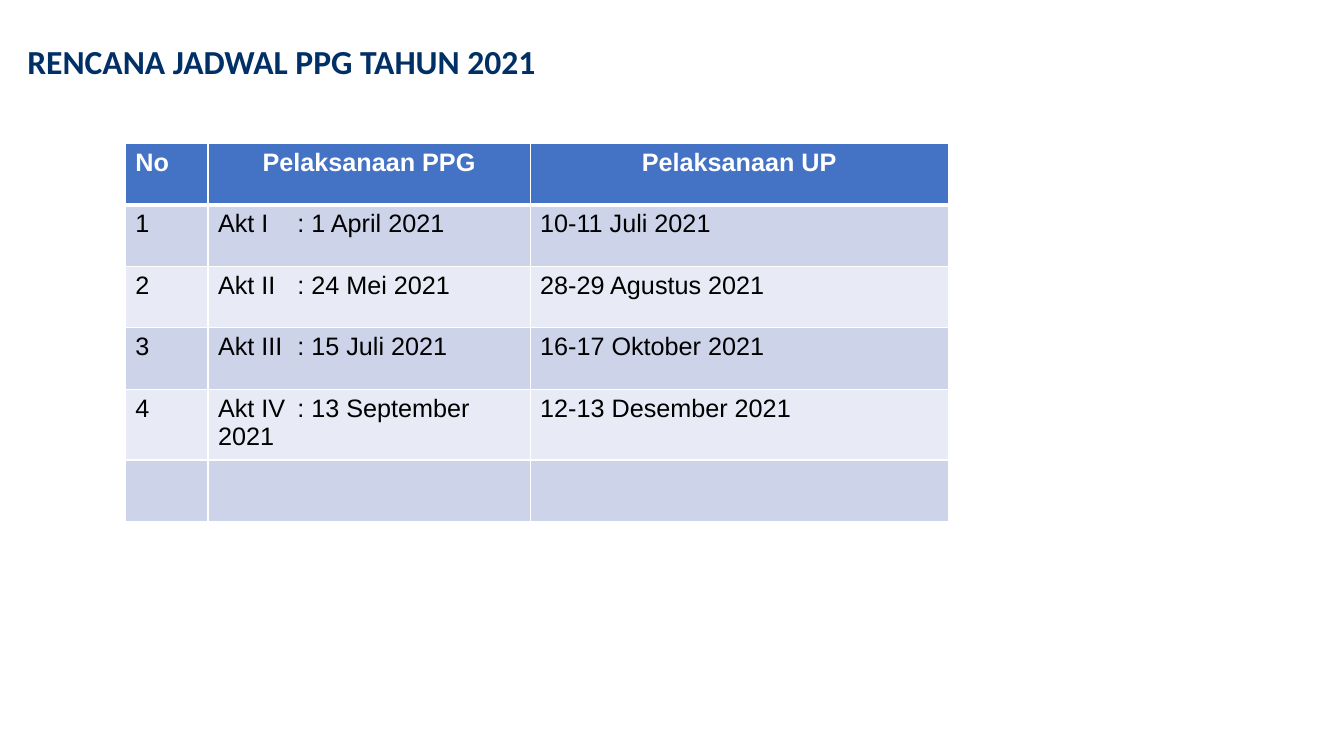
"""Build the slide with the PPG 2021 schedule table."""
from lxml import etree
from pptx import Presentation
from pptx.dml.color import RGBColor
from pptx.enum.text import PP_ALIGN
from pptx.oxml.ns import qn
from pptx.util import Cm, Pt

LEFT, CENTER = PP_ALIGN.LEFT, PP_ALIGN.CENTER

TITLE = "RENCANA JADWAL PPG TAHUN 2021"
HEADER = ("No", "Pelaksanaan PPG", "Pelaksanaan UP")
SCHEDULE = [
    ("1", "Akt I\t: 1 April 2021", "10-11 Juli 2021"),
    ("2", "Akt II\t: 24 Mei 2021", "28-29 Agustus 2021"),
    ("3", "Akt III\t: 15 Juli 2021", "16-17 Oktober 2021"),
    ("4", "Akt IV\t: 13 September 2021", "12-13 Desember 2021"),
    ("", "", ""),
]
COLORS = {
    "title": "013066",
    "header": "4472C4",
    "odd": "CDD4EA",
    "even": "E8EBF5",
    "white": "FFFFFF",
    "text": "000000",
}
COLUMN_WIDTHS = (Cm(2.08), Cm(8.12), Cm(10.54))
ROW_HEIGHT = Cm(1.55)
COLON_TAB = Cm(2)


def write_text(frame, text, size=18, font="Arial", color="text", bold=False, align=LEFT):
    paragraph = frame.paragraphs[0]
    paragraph.alignment = align
    paragraph.font.size = Pt(size)
    if "\t" in text:
        tab_list = etree.Element(qn("a:tabLst"))
        etree.SubElement(tab_list, qn("a:tab"), pos=str(COLON_TAB), algn="l")
        paragraph._p.get_or_add_pPr().insert(0, tab_list)
    if text:
        run = paragraph.add_run()
        run.text = text
        run.font.name = font
        run.font.size = Pt(size)
        run.font.bold = bold
        run.font.color.rgb = RGBColor.from_string(COLORS[color])


def add_borders(cell, top, bottom):
    properties = cell._tc.get_or_add_tcPr()
    for side, width in (("L", 1), ("R", 1), ("T", top), ("B", bottom)):
        line = etree.SubElement(properties, qn(f"a:ln{side}"), w=str(Pt(width)))
        fill = etree.SubElement(line, qn("a:solidFill"))
        etree.SubElement(fill, qn("a:srgbClr"), val=COLORS["white"])


def add_title(slide):
    box = slide.shapes.add_textbox(Cm(0.69), Cm(1.02), Cm(32.36), Cm(1.02))
    frame = box.text_frame
    frame.word_wrap = True
    frame.margin_left = frame.margin_right = frame.margin_top = frame.margin_bottom = 0
    write_text(frame, TITLE, size=24, font="Calibri", color="title", bold=True)


def add_schedule(slide):
    rows = [HEADER] + SCHEDULE
    table = slide.shapes.add_table(
        len(rows), len(HEADER), Cm(3.16), Cm(3.61),
        sum(COLUMN_WIDTHS), ROW_HEIGHT * len(rows),
    ).table
    for column, width in zip(table.columns, COLUMN_WIDTHS):
        column.width = width
    for row_index, row in enumerate(rows):
        table.rows[row_index].height = ROW_HEIGHT
        is_header = row_index == 0
        fill = "header" if is_header else ("even", "odd")[row_index % 2]
        for column_index, text in enumerate(row):
            cell = table.cell(row_index, column_index)
            add_borders(cell, top=3 if row_index == 1 else 1, bottom=3 if is_header else 1)
            cell.fill.solid()
            cell.fill.fore_color.rgb = RGBColor.from_string(COLORS[fill])
            write_text(
                cell.text_frame, text, bold=is_header,
                color="white" if is_header else "text",
                align=CENTER if is_header and column_index else LEFT,
            )


def main():
    presentation = Presentation()
    presentation.slide_width = Cm(33.87)
    presentation.slide_height = Cm(19.05)
    slide = presentation.slides.add_slide(presentation.slide_layouts[6])
    add_title(slide)
    add_schedule(slide)
    presentation.save("out.pptx")


if __name__ == "__main__":
    main()
